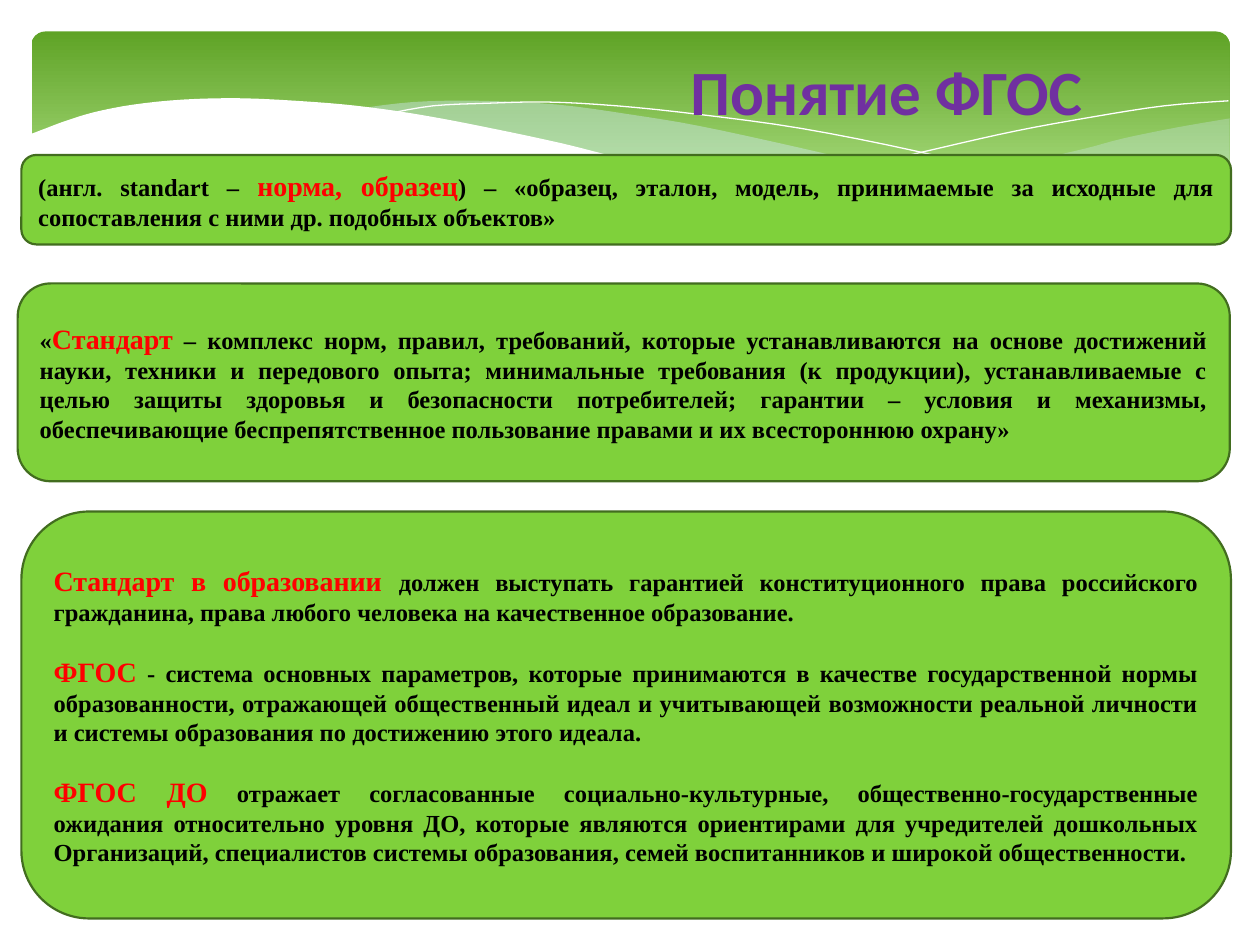
from dataclasses import dataclass
from typing import NamedTuple

from lxml import etree
from pptx import Presentation
from pptx import util as u
from pptx.dml.color import RGBColor
from pptx.enum import shapes, text
from pptx.oxml.ns import qn

COLUMNS, ROWS = 100, 75
CELL = u.Inches(0.1)


@dataclass(frozen=True)
class Theme:
    band_top: str = "5FA326"
    band_bottom: str = "B2E389"
    haze: str = "D6ECFF"
    white: str = "FFFFFF"
    box: str = "7FD13B"
    box_line: str = "426D1F"
    title: str = "7030A0"
    term: str = "FF0000"
    body: str = "000000"
    title_font: str = "Calibri"
    body_font: str = "Times New Roman"
    title_size: int = 36
    term_size: int = 16
    body_size: int = 14
    paragraph_gap: int = 16


THEME = Theme()


class Span(NamedTuple):
    wording: str
    is_term: bool = False


class Area(NamedTuple):
    column: float
    row: float
    columns: float
    rows: float


class Definition(NamedTuple):
    area: Area
    paras: list[list[Span]]


class Wave(NamedTuple):
    """Curves are joined end to end; a wave with no fill is an open white line."""
    curves: list[list[tuple[float, float]]]
    fill: str | None = None
    opacity: int = 100


LOWER_EDGE = [(97.7, 14.1), (94, 15.4), (89.9, 16.4), (85, 17), (80.9, 17.1), (74.4, 16.8),
              (66.8, 16), (57.9, 14.4), (50.3, 12.8), (44.7, 11.4), (39.1, 10.2), (33.9, 9.2),
              (29.2, 8.5), (25, 8.1), (19.3, 7.8), (14.6, 7.9), (10.6, 8.3), (7.5, 8.9),
              (5.2, 9.6), (3.6, 10.2), (2.3, 10.7)]
WAVES = [
    Wave([[(97.6, 9.4), (93.5, 10.1), (89.1, 11), (86.1, 11.8), (80.5, 13.1), (75.3, 14.3),
           (66.1, 16)],
          [(66.1, 16), (71.8, 16.7), (76.9, 17.1), (82.4, 17.2), (87.2, 16.9), (91.3, 16.2),
           (94.9, 15.2), (97.6, 14.1)]], THEME.haze, 29),
    Wave([[(89.3, 16.7), (83.7, 16), (77.5, 14.9), (70.6, 13.4), (62.9, 11.6), (55.5, 10),
           (50.1, 9.1), (44.2, 8.3), (38, 8), (32.8, 8.1), (28.6, 8.6)],
          [(28.6, 8.6), (34.2, 9.4), (40.4, 10.6), (49.1, 12.6), (56.6, 14.3), (65, 15.8),
           (72.2, 16.8), (78.5, 17.2), (83.8, 17.2), (89.3, 16.7)]], THEME.haze, 40),
    Wave([[(30.9, 9), (34.4, 8.4), (38.7, 8.2), (43.3, 8.1), (48.9, 8.4), (55.6, 9.1),
           (63.6, 10.2), (72.7, 12), (83.1, 14.5), (90.7, 16.6)]]),
    Wave([[(61.3, 15.1), (67.2, 13.5), (74.8, 11.7), (80.6, 10.4), (86.6, 9.3), (92.4, 8.4),
           (97.5, 8)]]),
    Wave([LOWER_EDGE, [(2.3, 22.4), (97.7, 22.4)]], THEME.white),
]

TITLE_AREA = Area(53.1, 3.6, 34.5, 7.1)
DEFINITIONS = [
    Definition(Area(1.7, 12.3, 96, 7.1), [[
        Span("(англ. standart – "), Span("норма, образец", True),
        Span(") – «образец, эталон, модель, принимаемые за исходные для сопоставления "
             "с ними др. подобных объектов»")]]),
    Definition(Area(1.4, 22.5, 96.2, 15.7), [[
        Span("«"), Span("Стандарт", True),
        Span(" – комплекс норм, правил, требований, которые устанавливаются на основе "
             "достижений науки, техники и передового опыта; минимальные требования "
             "(к продукции), устанавливаемые с целью защиты здоровья и безопасности "
             "потребителей; гарантии – условия и механизмы, обеспечивающие "
             "беспрепятственное пользование правами и их всестороннюю охрану»")]]),
    Definition(Area(1.7, 40.6, 96, 32.3), [
        [Span("Стандарт в образовании ", True),
         Span("должен выступать гарантией конституционного права российского гражданина, "
              "права любого человека на качественное образование.")],
        [Span("ФГОС", True),
         Span(" - система основных параметров, которые принимаются в качестве "
              "государственной нормы образованности, отражающей общественный идеал и "
              "учитывающей возможности реальной личности и системы образования по "
              "достижению этого идеала.")],
        [Span("ФГОС ДО", True),
         Span(" отражает согласованные социально-культурные, общественно-государственные "
              "ожидания относительно уровня ДО, которые являются ориентирами для "
              "учредителей дошкольных Организаций, специалистов системы образования, "
              "семей воспитанников и широкой общественности.")]]),
]


def grid(cells: float) -> u.Emu:
    return u.Emu(round(cells * CELL))


def rgb(colour: str) -> RGBColor:
    return RGBColor.from_string(colour)


def add_text(para, wording: str, *, size: int, colour: str, font: str) -> None:
    run = para.add_run()
    run.text = wording
    run.font.size, run.font.name, run.font.bold = u.Pt(size), font, True
    run.font.color.rgb = rgb(colour)


def add_rounded(page, area: Area):
    box = page.shapes.add_shape(shapes.MSO_SHAPE.ROUNDED_RECTANGLE, *map(grid, area))
    box.shadow.inherit = False
    return box


def smooth(points: list, steps: int = 4) -> list:
    """Return points along a Catmull-Rom curve through the given points."""
    if len(points) < 3:
        return points
    padded = [points[0], *points, points[-1]]
    curve = [points[0]]
    for a, b, c, d in zip(padded, padded[1:], padded[2:], padded[3:]):
        for t in (step / steps for step in range(1, steps + 1)):
            curve.append(tuple(
                (2 * q + (r - p) * t + (2 * p - 5 * q + 4 * r - s) * t**2
                 + (3 * q - p - 3 * r + s) * t**3) / 2
                for p, q, r, s in zip(a, b, c, d)))
    return curve


def add_band(page) -> None:
    band = add_rounded(page, Area(2.5, 2.5, 95.1, 15.6))
    band.adjustments[0] = 0.07
    band.line.fill.background()
    band.fill.gradient()
    band.fill.gradient_angle = 270
    stops = [(0, THEME.band_top), (0.9, THEME.band_bottom)]
    for stop, (position, colour) in zip(band.fill.gradient_stops, stops):
        stop.position, stop.color.rgb = position, rgb(colour)


def add_wave(page, wave: Wave) -> None:
    points = [(grid(x), grid(y)) for curve in wave.curves for x, y in smooth(curve)]
    builder = page.shapes.build_freeform(*points[0])
    builder.add_line_segments(points[1:], close=wave.fill is not None)
    shape = builder.convert_to_shape()
    shape.shadow.inherit = False
    if wave.fill is None:
        shape.fill.background()
        shape.line.color.rgb = rgb(THEME.white)
        shape.line.width = 0
        return
    shape.line.fill.background()
    shape.fill.solid()
    shape.fill.fore_color.rgb = rgb(wave.fill)
    if wave.opacity < 100:
        colour = next(shape._element.spPr.iter(qn("a:srgbClr")))
        etree.SubElement(colour, qn("a:alpha"), val=str(wave.opacity * 1000))


def add_title(page, wording: str) -> None:
    title = page.shapes.title
    title.left, title.top, title.width, title.height = map(grid, TITLE_AREA)
    frame = title.text_frame
    frame.word_wrap, frame.auto_size = False, text.MSO_AUTO_SIZE.NONE
    para = frame.paragraphs[0]
    para.alignment = text.PP_ALIGN.CENTER
    add_text(para, wording, size=THEME.title_size, colour=THEME.title, font=THEME.title_font)
    page.shapes._spTree.append(title._element)  # bring in front of the waves


def add_definition(page, definition: Definition) -> None:
    box = add_rounded(page, definition.area)
    box.fill.solid()
    box.fill.fore_color.rgb = rgb(THEME.box)
    box.line.color.rgb = rgb(THEME.box_line)
    box.line.width = u.Pt(1.25)
    frame = box.text_frame
    frame.word_wrap, frame.vertical_anchor = True, text.MSO_ANCHOR.MIDDLE
    for index, spans in enumerate(definition.paras):
        para = frame.add_paragraph() if index else frame.paragraphs[0]
        para.alignment = text.PP_ALIGN.JUSTIFY
        para.space_before = u.Pt(THEME.paragraph_gap if index else 0)
        for span in spans:
            add_text(para, span.wording, font=THEME.body_font,
                     size=THEME.term_size if span.is_term else THEME.body_size,
                     colour=THEME.term if span.is_term else THEME.body)


def main() -> None:
    deck = Presentation()
    deck.slide_width, deck.slide_height = grid(COLUMNS), grid(ROWS)
    page = deck.slides.add_slide(deck.slide_layouts[5])
    add_band(page)
    for wave in WAVES:
        add_wave(page, wave)
    add_title(page, "Понятие ФГОС")
    for definition in DEFINITIONS:
        add_definition(page, definition)
    deck.save("out.pptx")


if __name__ == "__main__":
    main()
